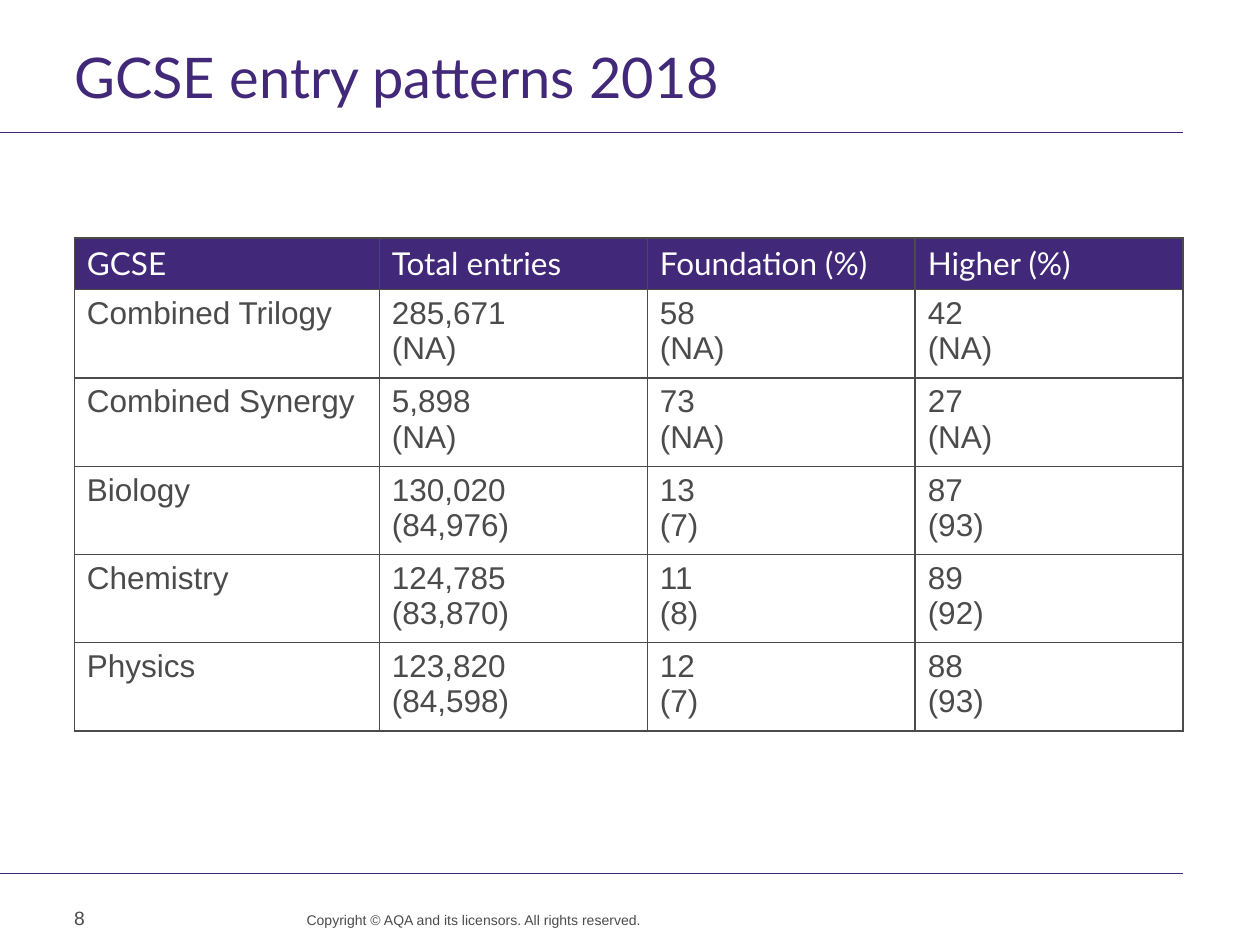
"""Build the GCSE entry patterns slide with its table of entries by tier."""
from lxml.etree import SubElement
from pptx import Presentation
from pptx.dml.color import RGBColor
from pptx.enum.shapes import MSO_CONNECTOR
from pptx.enum.text import MSO_ANCHOR, PP_ALIGN
from pptx.oxml.ns import qn
from pptx.util import Pt

COLORS = {"purple": "412878", "grey": "4B4B4B", "white": "FFFFFF"}
FORMATS = {
    "title": {"name": "Lato", "size": Pt(32), "color": "purple"},
    "header": {"name": "Lato", "size": Pt(18), "color": "white"},
    "body": {"name": "Arial", "size": Pt(18), "color": "grey"},
    "copyright": {"name": "Arial", "size": Pt(8), "color": "grey"},
    "number": {"name": "Arial", "size": Pt(11), "color": "grey"},
}
TEXTS = [
    ("GCSE entry patterns 2018", "title", (42.5, 34.5, 633.6, 33.8), (0, 0, 7.2, 0),
     {"line_spacing": Pt(28)}, MSO_ANCHOR.TOP),
    ("Copyright © AQA and its licensors. All rights reserved.", "copyright",
     (155.5, 520.6, 211, 18.7), (0, 0, 0, 0),
     {"line_spacing": Pt(10), "alignment": PP_ALIGN.RIGHT}, MSO_ANCHOR.TOP),
    ("8", "number", (35.3, 509.8, 54.7, 28.8), (7.2, 3.6, 7.2, 3.6), {}, MSO_ANCHOR.MIDDLE),
]
ROWS = [
    ("GCSE", "Total entries", "Foundation (%)", "Higher (%)"),
    ("Combined Trilogy", "285,671\n(NA)", "58\n(NA)", "42\n(NA)"),
    ("Combined Synergy", "5,898\n(NA)", "73\n(NA)", "27\n(NA)"),
    ("Biology", "130,020\n(84,976)", "13\n(7)", "87\n(93)"),
    ("Chemistry", "124,785\n(83,870)", "11\n(8)", "89\n(92)"),
    ("Physics", "123,820\n(84,598)", "12\n(7)", "88\n(93)"),
]
RULE_YS, RULE_END = (75.6, 499), 676.1
TABLE_LEFT, TABLE_TOP = 42.5, 136.1
COL_WIDTHS = [174.3] + [153.1] * 3
ROW_HEIGHTS = [29.5] + [47.6] * 5


def rgb(key):
    return RGBColor.from_string(COLORS[key])


def write(p, text, kind):
    p.text = text
    for r in p.runs:
        for key, value in FORMATS[kind].items():
            if key == "color":
                r.font.color.rgb = rgb(value)
            else:
                setattr(r.font, key, value)


def add_rule(s, y):
    line = s.shapes.add_connector(MSO_CONNECTOR.STRAIGHT, 0, Pt(y), Pt(RULE_END), Pt(y))
    line.line.color.rgb = rgb("purple")
    line.line.width = Pt(0.6)
    SubElement(line._element.spPr, qn("a:effectLst"))


def add_text(s, text, kind, box, insets, layout, anchor):
    tf = s.shapes.add_textbox(*map(Pt, box)).text_frame
    tf.word_wrap = True
    tf.vertical_anchor = anchor
    for side, inset in zip(("left", "top", "right", "bottom"), insets):
        setattr(tf, f"margin_{side}", Pt(inset))
    p = tf.paragraphs[0]
    for key, value in layout.items():
        setattr(p, key, value)
    write(p, text, kind)


def add_borders(cell):
    tc_pr = cell._tc.get_or_add_tcPr()
    for i, side in enumerate(("lnL", "lnR", "lnT", "lnB")):
        ln = tc_pr.makeelement(qn(f"a:{side}"), {"w": str(Pt(1))})
        fill = SubElement(ln, qn("a:solidFill"))
        SubElement(fill, qn("a:srgbClr"), val=COLORS["grey"])
        tc_pr.insert(i, ln)


def add_entries(s):
    box = (TABLE_LEFT, TABLE_TOP, sum(COL_WIDTHS), sum(ROW_HEIGHTS))
    table = s.shapes.add_table(len(ROWS), len(COL_WIDTHS), *map(Pt, box)).table
    table.first_row = table.horz_banding = False
    for col, width in zip(table.columns, COL_WIDTHS):
        col.width = Pt(width)
    for i, (row, height) in enumerate(zip(table.rows, ROW_HEIGHTS)):
        row.height = Pt(height)
        for cell, text in zip(row.cells, ROWS[i]):
            write(cell.text_frame.paragraphs[0], text, "body" if i else "header")
            if i:
                cell.fill.background()
            else:
                cell.fill.solid()
                cell.fill.fore_color.rgb = rgb("purple")
            add_borders(cell)


def main():
    prs = Presentation()
    prs.slide_width, prs.slide_height = Pt(720), Pt(540)
    s = prs.slides.add_slide(prs.slide_layouts[6])
    for y in RULE_YS:
        add_rule(s, y)
    for item in TEXTS:
        add_text(s, *item)
    add_entries(s)
    prs.save("out.pptx")


if __name__ == "__main__":
    main()
